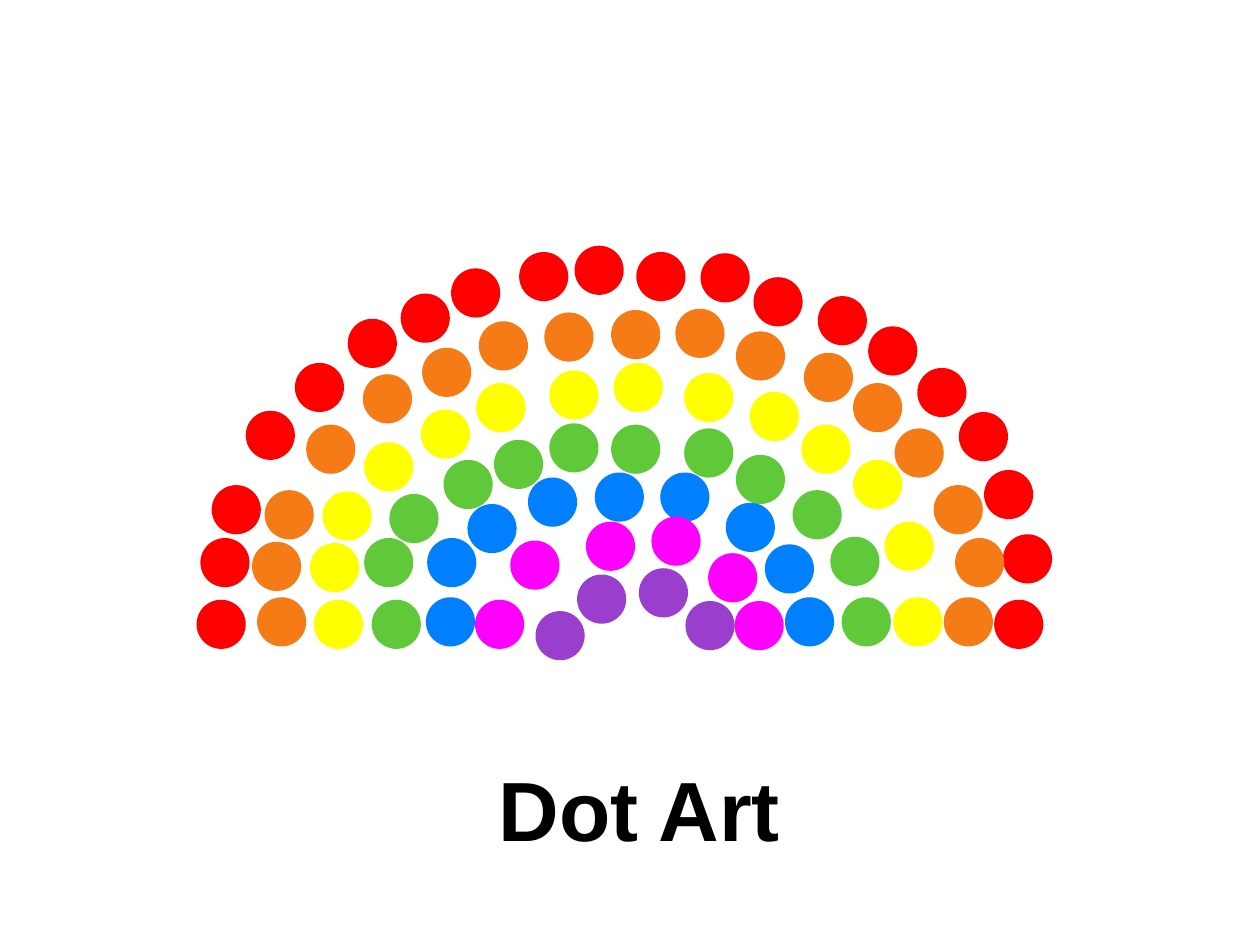
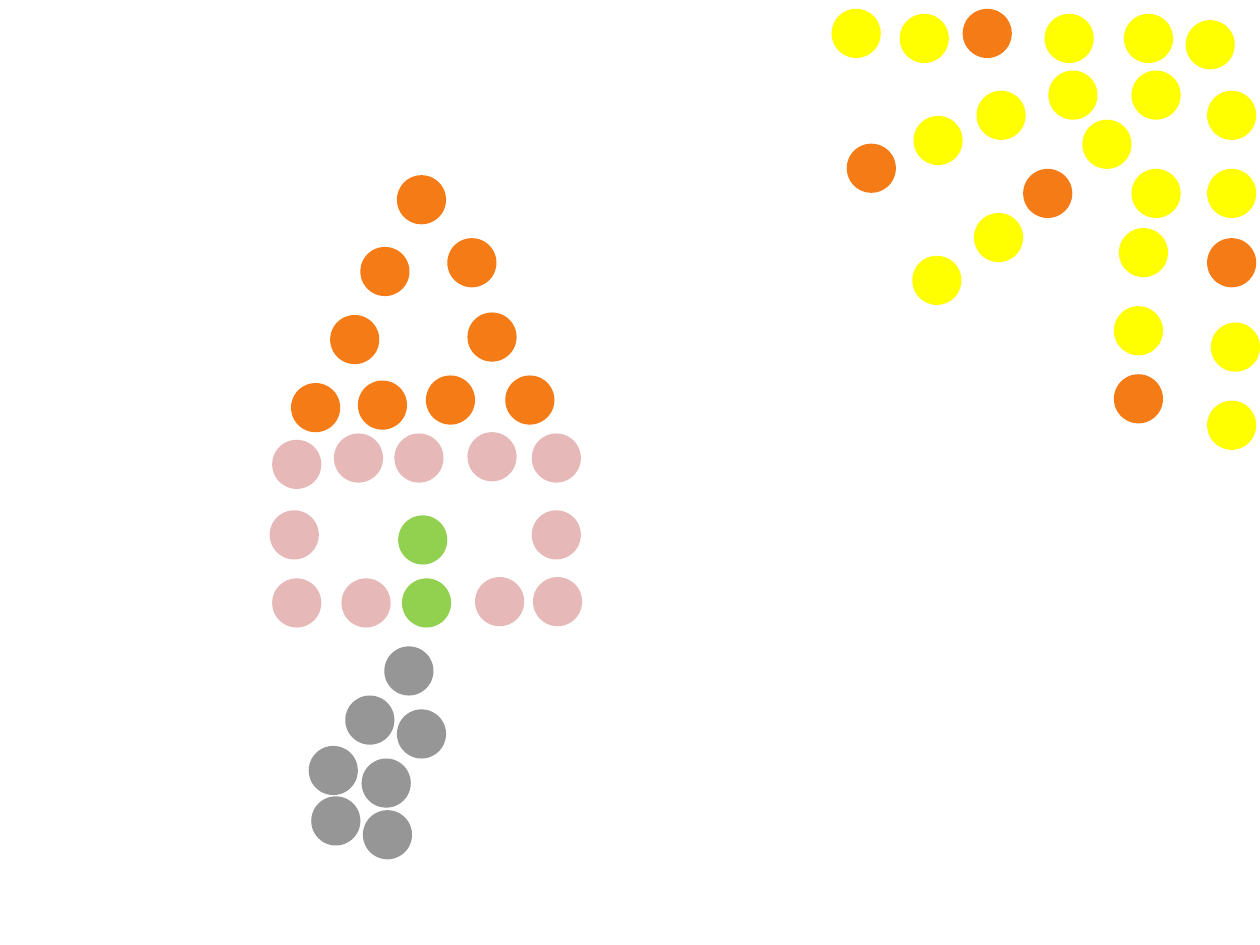
from lxml import etree
from pptx import Presentation
from pptx.dml.color import RGBColor
from pptx.enum.shapes import MSO_SHAPE
from pptx.enum.text import MSO_ANCHOR, PP_ALIGN
from pptx.oxml.ns import qn
from pptx.util import Pt

PX = 9144
PAGE_WIDTH, PAGE_HEIGHT = 1000, 750
DOT_SIZE = 39
TITLE_ONLY, BLANK = 5, 6
OVAL = MSO_SHAPE.OVAL
MIDDLE = MSO_ANCHOR.MIDDLE
CENTER = PP_ALIGN.CENTER

FONT = "Arial"
BLACK = RGBColor(0x00, 0x00, 0x00)
WHITE = RGBColor(0xFF, 0xFF, 0xFF)
RED = RGBColor(0xFF, 0x00, 0x00)
ORANGE = RGBColor(0xF5, 0x7B, 0x17)
YELLOW = RGBColor(0xFF, 0xFF, 0x00)
GREEN = RGBColor(0x60, 0xC9, 0x39)
BLUE = RGBColor(0x00, 0x80, 0xFF)
MAGENTA = RGBColor(0xFF, 0x00, 0xFF)
PURPLE = RGBColor(0x99, 0x3E, 0xCD)
PINK = RGBColor(0xE6, 0xB9, 0xB8)
LIME = RGBColor(0x92, 0xD0, 0x50)
GRAY = RGBColor(0x96, 0x96, 0x96)

TITLE = "Dot Art"
TITLE_AREA = (140, 558, 735, 167)
TITLE_OPACITY = 78

RAINBOW = [
    (RED, [
        (156, 476), (159, 427), (168, 385), (195, 326), (234, 288),
        (276, 253), (318, 233), (358, 213), (412, 200), (456, 195),
        (505, 200), (556, 201), (598, 220), (649, 235), (689, 259),
        (728, 292), (761, 327), (781, 373), (796, 424), (789, 476),
    ]),
    (ORANGE, [
        (204, 474), (200, 430), (210, 389), (243, 337), (288, 297),
        (335, 276), (380, 255), (432, 248), (485, 246), (536, 245),
        (584, 263), (638, 280), (677, 304), (710, 340), (741, 385),
        (758, 427), (749, 474),
    ]),
    (YELLOW, [
        (249, 476), (246, 431), (256, 390), (289, 351), (334, 325),
        (378, 304), (436, 294), (487, 288), (543, 296), (595, 311),
        (636, 337), (677, 365), (702, 414), (709, 474),
    ]),
    (GREEN, [
        (295, 476), (289, 427), (309, 392), (352, 365), (392, 349),
        (436, 336), (485, 337), (543, 340), (584, 361), (629, 389),
        (659, 426), (668, 474),
    ]),
    (BLUE, [
        (338, 474), (339, 427), (371, 400), (419, 379), (472, 375),
        (524, 375), (576, 399), (607, 432), (623, 474),
    ]),
    (MAGENTA, [
        (377, 476), (405, 429), (465, 414), (517, 410), (562, 439),
        (583, 477),
    ]),
    (PURPLE, [(425, 485), (458, 456), (507, 451), (544, 477)]),
]

SUN = [
    (YELLOW, [
        (660, 7), (714, 11), (829, 11), (892, 11), (941, 16),
        (725, 92), (775, 72), (832, 56), (898, 56), (958, 72),
        (859, 95), (898, 134), (958, 134), (724, 203), (773, 169),
        (888, 181), (884, 243), (961, 256), (958, 318),
    ]),
    (ORANGE, [(764, 7), (672, 114), (812, 134), (958, 189), (884, 297)]),
]

HOUSE = [
    (PINK, [
        (216, 349), (265, 344), (313, 344), (371, 343), (422, 344),
        (214, 405), (422, 405),
        (216, 459), (271, 459), (377, 458), (423, 458),
    ]),
    (LIME, [(316, 409), (319, 459)]),
    (ORANGE, [
        (315, 139), (262, 250), (355, 189), (286, 196), (371, 248),
        (231, 304), (284, 302), (338, 298), (401, 298),
    ]),
]

PATH_TO_DOOR = [
    (GRAY, [
        (305, 513), (274, 552), (315, 563), (245, 592), (287, 602),
        (247, 632), (288, 643),
    ]),
]


def draw_dots(page, groups):
    for color, corners in groups:
        for left, top in corners:
            dot = page.shapes.add_shape(
                OVAL, left * PX, top * PX, DOT_SIZE * PX, DOT_SIZE * PX)
            dot.shadow.inherit = False
            dot.fill.solid()
            dot.fill.fore_color.rgb = color
            dot.line.fill.background()


def set_opacity(shape, percent):
    color = shape.fill._xPr.find(qn("a:solidFill"))[0]
    etree.SubElement(color, qn("a:alpha"), val=str(percent * 1000))


def format_title(page):
    box = page.shapes.title
    box.left, box.top, box.width, box.height = (
        length * PX for length in TITLE_AREA)
    box.fill.solid()
    box.fill.fore_color.rgb = WHITE
    set_opacity(box, TITLE_OPACITY)
    frame = box.text_frame
    frame.text = TITLE
    frame.word_wrap = True
    frame.vertical_anchor = MIDDLE
    para = frame.paragraphs[0]
    para.alignment = CENTER
    para.font.name = FONT
    para.font.size = Pt(48)
    para.font.bold = True
    para.font.color.rgb = BLACK


def main():
    deck = Presentation()
    deck.slide_width = PAGE_WIDTH * PX
    deck.slide_height = PAGE_HEIGHT * PX

    rainbow_page = deck.slides.add_slide(deck.slide_layouts[TITLE_ONLY])
    draw_dots(rainbow_page, RAINBOW)
    format_title(rainbow_page)

    house_page = deck.slides.add_slide(deck.slide_layouts[BLANK])
    draw_dots(house_page, SUN + HOUSE + PATH_TO_DOOR)

    deck.save("out.pptx")


if __name__ == "__main__":
    main()
